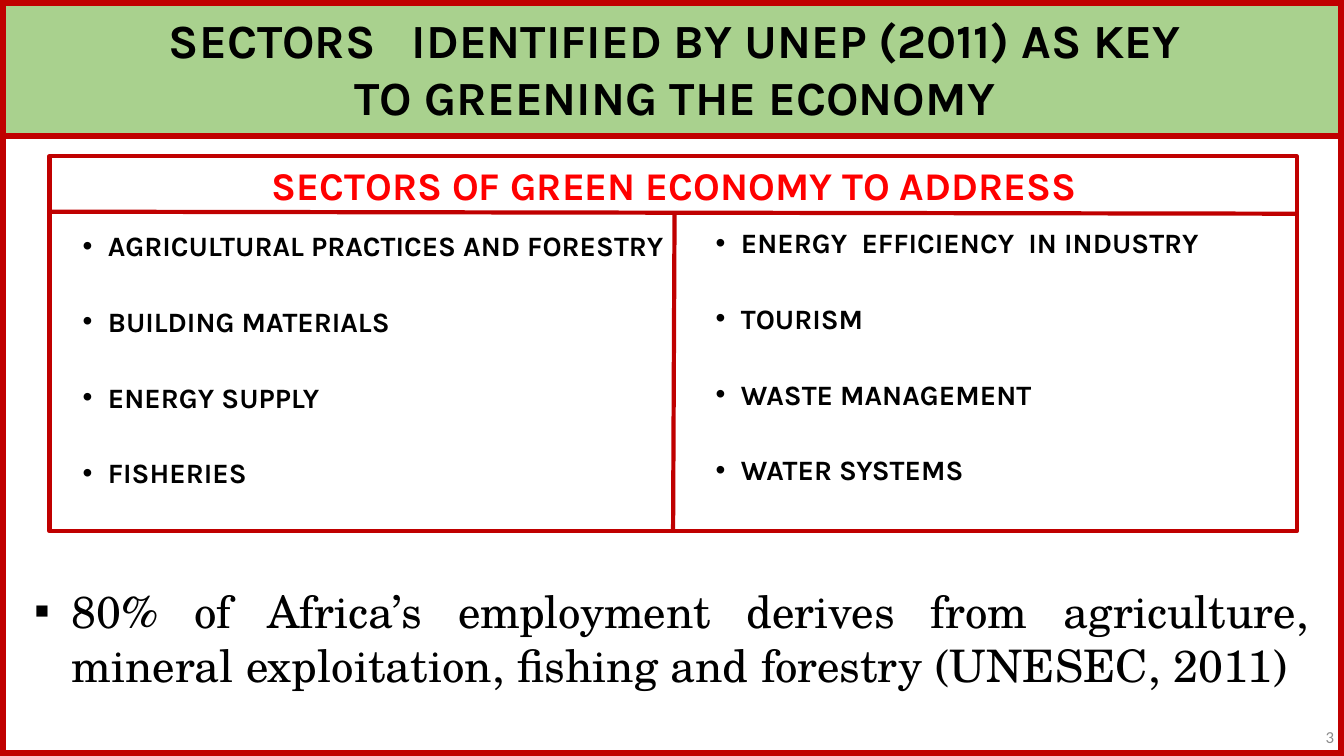
import pptx
import pptx.util
import pptx.dml.color
import pptx.enum.shapes
import pptx.enum.text
import pptx.oxml
import pptx.oxml.ns
import lxml.etree

ALIGN = pptx.enum.text.PP_ALIGN
ANCHOR = pptx.enum.text.MSO_ANCHOR
FIT = pptx.enum.text.MSO_AUTO_SIZE
SHAPES = pptx.enum.shapes
PAGE_WIDTH = pptx.util.Inches(13.33)
PAGE_HEIGHT = pptx.util.Inches(7.5)
RED = "C00000"
SECTORS_LEFT = ["AGRICULTURAL PRACTICES AND FORESTRY", "BUILDING MATERIALS",
                "ENERGY SUPPLY", "FISHERIES"]
SECTORS_RIGHT = ["ENERGY  EFFICIENCY  IN INDUSTRY", "TOURISM",
                 "WASTE MANAGEMENT", "WATER SYSTEMS"]


def color(value):
    """Turn a hex string into a colour."""
    return pptx.dml.color.RGBColor.from_string(value)


def place(left, top, width, height):
    """Turn percentages of the slide's size into lengths."""
    return (int(PAGE_WIDTH * left / 100), int(PAGE_HEIGHT * top / 100),
            int(PAGE_WIDTH * width / 100), int(PAGE_HEIGHT * height / 100))


def apply(target, values):
    """Set each attribute named in a dict."""
    for name, value in values.items():
        setattr(target, name, value)


def move(box, area):
    """Put a placeholder at an area given in percent."""
    apply(box, dict(zip(("left", "top", "width", "height"), place(*area))))
    return box


def add_bullet(para, mark, indent):
    """Give a paragraph a hanging bullet."""
    properties = para._p.get_or_add_pPr()
    hang = pptx.util.Inches(indent)
    properties.set("marL", str(hang))
    properties.set("indent", str(-hang))
    for tag, name, value in (("a:buFont", "typeface", "Arial"),
                             ("a:buChar", "char", mark)):
        element = lxml.etree.SubElement(properties, pptx.oxml.ns.qn(tag))
        element.set(name, value)


def write(box, lines, size, font="Karla", ink="000000", bold=True,
          align=ALIGN.LEFT, anchor=ANCHOR.TOP, fit=FIT.SHAPE_TO_FIT_TEXT,
          bullet=None, indent=0, after=0, spacing=1):
    """Fill a box with formatted paragraphs."""
    frame = box.text_frame
    apply(frame, {"word_wrap": True, "vertical_anchor": anchor, "auto_size": fit})
    for number, line in enumerate(lines):
        para = frame.add_paragraph() if number else frame.paragraphs[0]
        apply(para, {"alignment": align, "space_before": pptx.util.Pt(0),
                     "space_after": pptx.util.Pt(after),
                     "line_spacing": spacing if number else 1.0})
        if bullet:
            add_bullet(para, bullet, indent)
        span = para.add_run()
        span.text = line
        apply(span.font, {"name": font, "size": pptx.util.Pt(size), "bold": bold})
        span.font.color.rgb = color(ink)


def add_text(page, area, lines, size, **style):
    """Add a text box."""
    write(page.shapes.add_textbox(*place(*area)), lines, size, **style)


def outline(shape, weight):
    """Give a shape or connector a red line."""
    shape.line.color.rgb = color(RED)
    shape.line.width = pptx.util.Pt(weight)


def add_frame(page, area, weight):
    """Add an unfilled rectangle."""
    frame = page.shapes.add_shape(SHAPES.MSO_SHAPE.RECTANGLE, *place(*area))
    frame.shadow.inherit = False
    frame.fill.background()
    outline(frame, weight)
    return frame


def add_rule(page, ends):
    """Add a dividing line."""
    rule = page.shapes.add_connector(SHAPES.MSO_CONNECTOR.STRAIGHT, *place(*ends))
    outline(rule, 3)
    lxml.etree.SubElement(rule._element.spPr, pptx.oxml.ns.qn("a:effectLst"))
    return rule


def main():
    """Build the slide and save it."""
    deck = pptx.Presentation()
    apply(deck, {"slide_width": PAGE_WIDTH, "slide_height": PAGE_HEIGHT})
    page = deck.slides.add_slide(deck.slide_layouts.get_by_name("Two Content"))
    title, left, right = page.placeholders

    move(title, (0.22, 0, 100, 18))
    title.fill.solid()
    title.fill.fore_color.rgb = color("A9D18E")
    outline(title, 4.5)
    write(title, ["SECTORS   IDENTIFIED BY UNEP (2011) AS KEY",
                  "TO GREENING THE ECONOMY"], 34,
          align=ALIGN.CENTER, anchor=ANCHOR.MIDDLE, fit=FIT.NONE)

    for box, area, sectors in ((left, (5.4, 29.6, 45.6, 40.67), SECTORS_LEFT),
                               (right, (52.5, 29.2, 46.95, 34.67), SECTORS_RIGHT)):
        write(move(box, area), sectors, 20, bullet="•", indent=0.25,
              after=6, spacing=2.0)

    add_frame(page, (0, 0, 100, 100), 8)
    add_text(page, (77.5, 94.8, 22.5, 5.33), ["3"], 12, font="Calibri",
             ink="8C8C8C", bold=False, align=ALIGN.RIGHT,
             anchor=ANCHOR.MIDDLE, fit=FIT.NONE)
    add_text(page, (1.8, 76.53, 96.4, 15.73),
             ["80% of Africa’s employment derives from agriculture, mineral "
              "exploitation, fishing and forestry (UNESEC, 2011)"], 32,
             font="TeX Gyre Schola", bold=False, align=ALIGN.JUSTIFY,
             bullet="▪", indent=0.37)
    add_text(page, (8.85, 20.67, 82.6, 7.6),
             ["SECTORS OF GREEN ECONOMY TO ADDRESS"], 28,
             ink="FF0000", align=ALIGN.CENTER)

    table_frame = add_frame(page, (3.68, 20.67, 92.8, 49.6), 3)
    add_rule(page, (50.19, 28.27, 50.08, 70.27)).end_connect(table_frame, 2)
    add_rule(page, (3.68, 28, 96.55, 28.27))
    deck.save("out.pptx")


if __name__ == "__main__":
    main()
